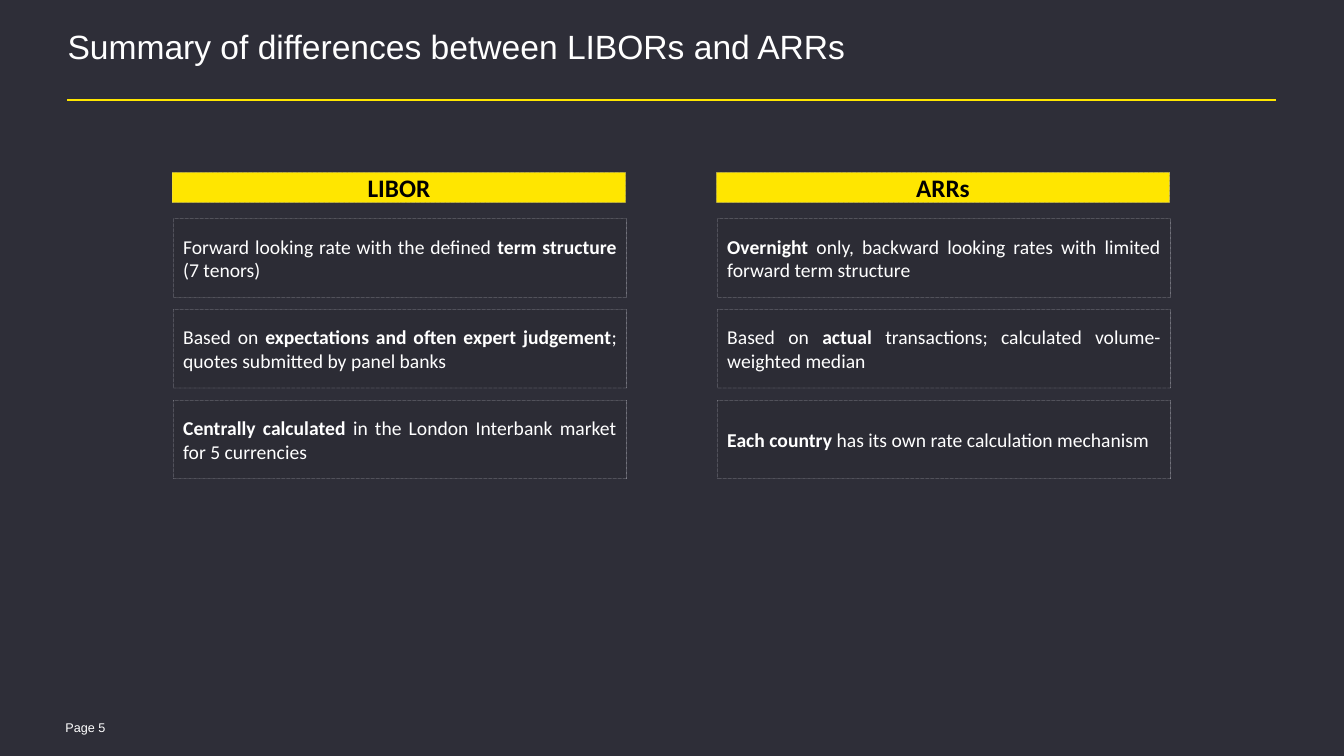
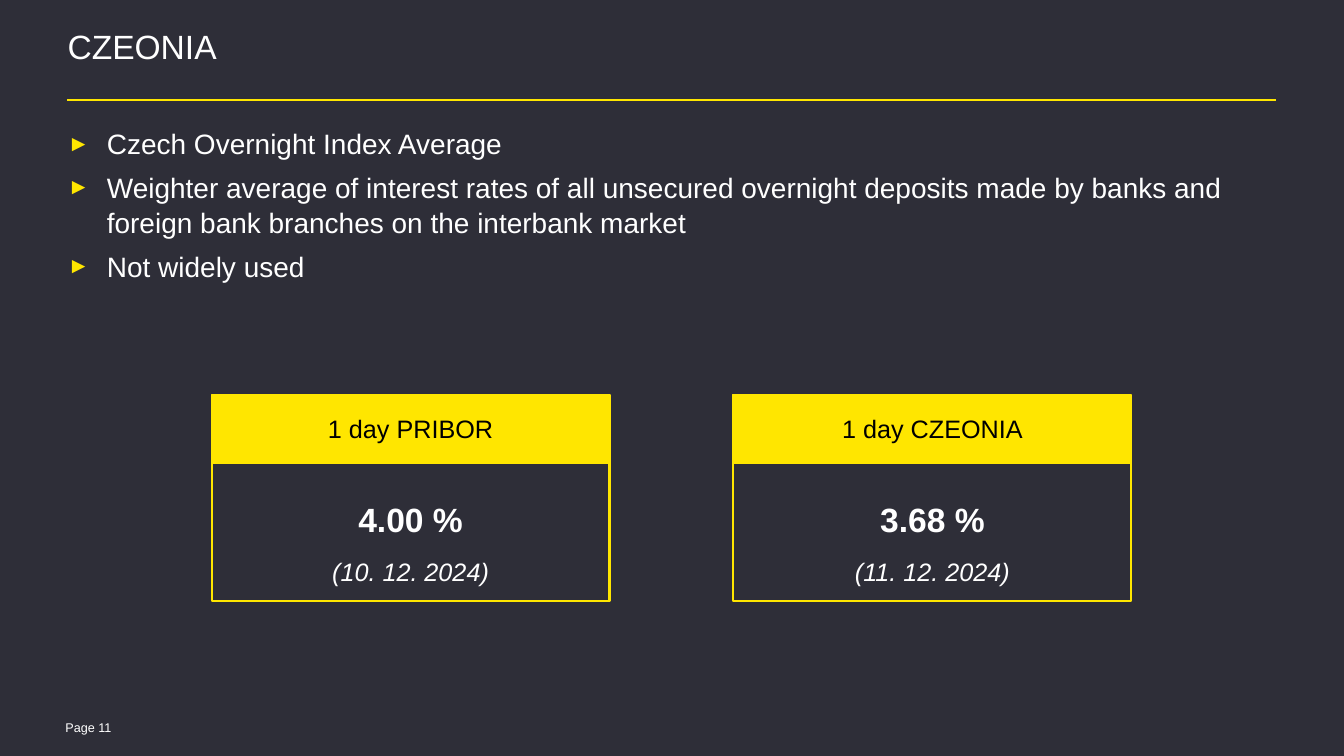
from lxml import etree
from pptx import Presentation
from pptx.dml.color import RGBColor
from pptx.enum.dml import MSO_LINE
from pptx.enum.shapes import MSO_CONNECTOR, MSO_SHAPE
from pptx.enum.text import MSO_ANCHOR, MSO_AUTO_SIZE, PP_ALIGN
from pptx.oxml.ns import qn
from pptx.util import Inches, Pt

STRAIGHT = MSO_CONNECTOR.STRAIGHT
RECTANGLE = MSO_SHAPE.RECTANGLE
TOP, MIDDLE = MSO_ANCHOR.TOP, MSO_ANCHOR.MIDDLE
LEFT, CENTER, JUSTIFY = PP_ALIGN.LEFT, PP_ALIGN.CENTER, PP_ALIGN.JUSTIFY
DOTTED = MSO_LINE.ROUND_DOT

BACKGROUND = RGBColor(0x2E, 0x2E, 0x38)
CARD = RGBColor(0x2C, 0x2C, 0x35)
YELLOW = RGBColor(0xFF, 0xE6, 0x00)
OUTLINE = RGBColor(0xD2, 0xD2, 0xDA)
WHITE = RGBColor(0xFF, 0xFF, 0xFF)
BLACK = RGBColor(0x00, 0x00, 0x00)

HEADING_FONT = "Arial"
CARD_FONT = "Calibri"
MARGIN = 0.67
CONTENT_WIDTH = 12.01

COMPARISON = [
    (1.71, "LIBOR", [
        "Forward looking rate with the defined *term structure* (7 tenors)",
        "Based on *expectations and often expert judgement*; quotes submitted by panel banks",
        "*Centrally calculated *in the London Interbank market for 5 currencies",
    ]),
    (7.11, "ARRs", [
        "*Overnight* only, backward looking rates with limited forward term structure",
        "Based on *actual* transactions; calculated volume-weighted median",
        "*Each country* has its own rate calculation mechanism",
    ]),
]
CZEONIA_POINTS = [
    "Czech Overnight Index Average",
    "Weighter average of interest rates of all unsecured overnight deposits made by banks "
    "and foreign bank branches on the interbank market",
    "Not widely used",
]
RATES = [
    (2.1, "1 day PRIBOR", "4.00 %", "(10. 12. 2024)"),
    (7.28, "1 day CZEONIA", "3.68 %", "(11. 12. 2024)"),
]


def style(paragraph, size, color=WHITE, name=HEADING_FONT, align=LEFT):
    paragraph.alignment = align
    font = paragraph.font
    font.size, font.name = Pt(size), name
    font.color.rgb = color
    return paragraph


def clear_insets(frame, top=0):
    frame.margin_left = frame.margin_right = frame.margin_bottom = 0
    frame.margin_top = Inches(top)
    frame.vertical_anchor = TOP
    frame.word_wrap = True


def add_text_frame(slide, left, top, width, height, inset_top=0):
    box = slide.shapes.add_textbox(Inches(left), Inches(top), Inches(width), Inches(height))
    clear_insets(box.text_frame, inset_top)
    return box.text_frame


def add_box(slide, left, top, width, height, fill=None):
    box = slide.shapes.add_shape(
        RECTANGLE, Inches(left), Inches(top), Inches(width), Inches(height))
    box.shadow.inherit = False
    if fill is None:
        box.fill.background()
    else:
        box.fill.solid()
        box.fill.fore_color.rgb = fill
    box.line.color.rgb = YELLOW
    box.line.width = Pt(1.5)
    box.text_frame.word_wrap = True
    box.text_frame.vertical_anchor = MIDDLE
    return box


def dot_outline(box):
    box.line.color.rgb = OUTLINE
    box.line.width = Pt(0.25)
    box.line.dash_style = DOTTED
    color = box.line._ln.find(".//" + qn("a:srgbClr"))
    etree.SubElement(color, qn("a:alpha"), val="65000")


def add_marked_text(paragraph, text):
    for index, part in enumerate(text.split("*")):
        if part:
            run = paragraph.add_run()
            run.text = part
            run.font.bold = index % 2 == 1


def add_bullet(paragraph):
    properties = paragraph._p.get_or_add_pPr()
    properties.set("marL", str(Inches(0.39)))
    properties.set("indent", str(-Inches(0.39)))
    color = etree.SubElement(properties, qn("a:buClr"))
    etree.SubElement(color, qn("a:srgbClr"), val=str(YELLOW))
    etree.SubElement(properties, qn("a:buSzPct"), val="80000")
    etree.SubElement(properties, qn("a:buFont"), typeface=HEADING_FONT)
    etree.SubElement(properties, qn("a:buChar"), char="►")


def add_slide(presentation, title_text, page):
    slide = presentation.slides.add_slide(presentation.slide_layouts[5])
    title = slide.shapes.title
    title.left, title.top = Inches(MARGIN), Inches(0.32)
    title.width, title.height = Inches(CONTENT_WIDTH), Inches(0.65)
    clear_insets(title.text_frame)
    title.text_frame.auto_size = MSO_AUTO_SIZE.NONE
    title.text_frame.text = title_text
    style(title.text_frame.paragraphs[0], 24).line_spacing = 0.85

    rule = slide.shapes.add_connector(
        STRAIGHT, Inches(MARGIN), Inches(0.99), Inches(12.67), Inches(0.99))
    rule.line.color.rgb = YELLOW
    rule.line.width = Pt(1.5)
    etree.SubElement(rule._element.spPr, qn("a:effectLst"))

    footer = add_text_frame(slide, 0.65, 7.12, 1, 0.17, inset_top=0.04)
    footer.text = f"Page {page}"
    style(footer.paragraphs[0], 9).line_spacing = 0.85
    return slide


def add_column(slide, left, heading, cards):
    header = add_box(slide, left, 1.71, 4.5, 0.3, YELLOW)
    dot_outline(header)
    header.text_frame.text = heading
    style(header.text_frame.paragraphs[0], 18, BLACK, CARD_FONT, CENTER).font.bold = True
    for row, text in enumerate(cards):
        card = add_box(slide, left + 0.01, 2.17 + 0.9 * row, 4.5, 0.78, CARD)
        dot_outline(card)
        paragraph = style(
            card.text_frame.paragraphs[0], 14, name=CARD_FONT, align=JUSTIFY)
        add_marked_text(paragraph, text)


def add_bullets(slide, points):
    frame = add_text_frame(slide, MARGIN, 1.24, CONTENT_WIDTH, 1.6)
    frame.text = "\n".join(points)
    for paragraph in frame.paragraphs:
        style(paragraph, 20)
        paragraph.line_spacing = 1.05
        paragraph.space_after = Pt(6)
        add_bullet(paragraph)


def add_rate(slide, left, heading, value, date):
    frame = add_box(slide, left, 3.92, 3.95, 2.04).text_frame
    clear_insets(frame, 1.03)
    frame.text = f"{value}\n{date}"
    value_paragraph, date_paragraph = frame.paragraphs
    style(value_paragraph, 24, align=CENTER).font.bold = True
    value_paragraph.space_after = Pt(12)
    style(date_paragraph, 18, align=CENTER).font.italic = True

    header = add_box(slide, left, 3.92, 3.95, 0.67, YELLOW)
    header.text_frame.text = heading
    style(header.text_frame.paragraphs[0], 18, BLACK, align=CENTER)


def main():
    presentation = Presentation()
    presentation.slide_width = Inches(13.34)
    presentation.slide_height = Inches(7.5)
    background = presentation.slide_master.background.fill
    background.solid()
    background.fore_color.rgb = BACKGROUND

    slide = add_slide(presentation, "Summary of differences between LIBORs and ARRs", 5)
    for left, heading, cards in COMPARISON:
        add_column(slide, left, heading, cards)

    slide = add_slide(presentation, "CZEONIA", 11)
    add_bullets(slide, CZEONIA_POINTS)
    for left, heading, value, date in RATES:
        add_rate(slide, left, heading, value, date)

    presentation.save("out.pptx")


if __name__ == "__main__":
    main()
